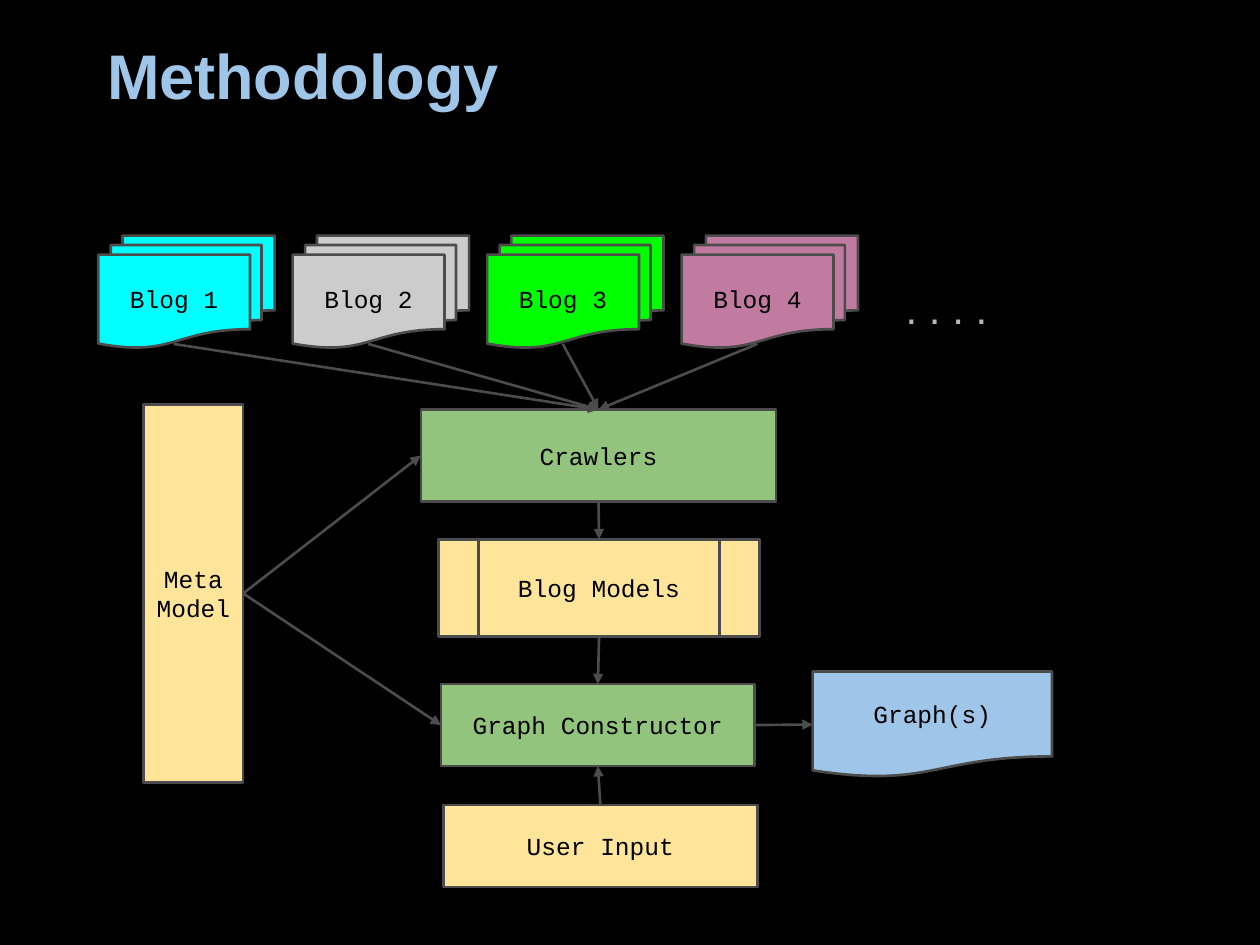
"""Build the Methodology slide: blogs are crawled, modelled and turned into graphs."""
from dataclasses import dataclass

import pptx
import pptx.dml.color
import pptx.enum.shapes
import pptx.enum.text
import pptx.oxml.xmlchemy
import pptx.util

Inches = pptx.util.Inches
Shapes = pptx.enum.shapes.MSO_SHAPE
Align = pptx.enum.text.PP_ALIGN
Anchor = pptx.enum.text.MSO_ANCHOR
Point = tuple[float, float]


@dataclass(frozen=True)
class Theme:
    """Colours, fonts and type sizes of the slide."""
    background: str = "000000"
    ink: str = "000000"
    outline: str = "4C4C4C"
    dots: str = "B7B7B7"
    blue: str = "9FC5E8"
    green: str = "93C47D"
    yellow: str = "FFE599"
    blogs: tuple[str, ...] = ("00FFFF", "CCCCCC", "00FF00", "C27BA0")
    heading_font: str = "Arial"
    label_font: str = "Courier New"
    title_size: float = 36
    dots_size: float = 24
    label_size: float = 14
    line_width: float = 1.5


THEME = Theme()


@dataclass(frozen=True)
class Node:
    """A labelled flowchart shape, measured in inches."""
    label: str
    left: float
    top: float
    width: float
    height: float
    fill: str
    kind: Shapes = Shapes.RECTANGLE

    @property
    def middle(self) -> float:
        """Return the vertical centre."""
        return self.top + self.height / 2

    @property
    def center(self) -> float:
        """Return the horizontal centre."""
        return self.left + self.width / 2

    @property
    def head(self) -> Point:
        """Return the middle of the top edge."""
        return self.center, self.top

    @property
    def foot(self) -> Point:
        """Return the middle of the bottom edge."""
        return self.center, self.top + self.height

    @property
    def start(self) -> Point:
        """Return the middle of the left edge."""
        return self.left, self.middle

    @property
    def end(self) -> Point:
        """Return the middle of the right edge."""
        return self.left + self.width, self.middle


def rgb(value: str) -> pptx.dml.color.RGBColor:
    """Turn a hex string into a colour."""
    return pptx.dml.color.RGBColor.from_string(value)


def write(shape, text: str, font: str, size: float, color: str,
          align: Align, anchor: Anchor, bold: bool = False) -> None:
    """Write one paragraph per line of text into a shape."""
    frame = shape.text_frame
    frame.word_wrap = True
    frame.auto_size = pptx.enum.text.MSO_AUTO_SIZE.SHAPE_TO_FIT_TEXT
    frame.vertical_anchor = anchor
    frame.margin_left = frame.margin_right = Inches(0.1)
    frame.margin_top = frame.margin_bottom = Inches(0.1)
    for index, line in enumerate(text.split("\n")):
        paragraph = frame.add_paragraph() if index else frame.paragraphs[0]
        paragraph.alignment = align
        run = paragraph.add_run()
        run.text = line
        run.font.name = font
        run.font.size = pptx.util.Pt(size)
        run.font.bold = bold
        run.font.color.rgb = rgb(color)


def draw_title(slide, text: str) -> None:
    """Place the title with its first-line indent."""
    title = slide.shapes.title
    title.left, title.top = Inches(0.5), Inches(0.3)
    title.width, title.height = Inches(9), Inches(0.69)
    write(title, text, THEME.heading_font, THEME.title_size, THEME.blue,
          Align.LEFT, Anchor.BOTTOM, bold=True)
    properties = title.text_frame.paragraphs[0]._p.get_or_add_pPr()
    properties.set("marL", "0")
    properties.set("indent", str(int(Inches(0.25))))


def draw_node(slide, node: Node) -> None:
    """Draw one flowchart shape with its label."""
    box = map(Inches, (node.left, node.top, node.width, node.height))
    shape = slide.shapes.add_shape(node.kind, *box)
    shape.shadow.inherit = False
    shape.fill.solid()
    shape.fill.fore_color.rgb = rgb(node.fill)
    shape.line.color.rgb = rgb(THEME.outline)
    shape.line.width = pptx.util.Pt(THEME.line_width)
    write(shape, node.label, THEME.label_font, THEME.label_size, THEME.ink,
          Align.CENTER, Anchor.MIDDLE)


def draw_arrow(slide, origin: Point, target: Point) -> None:
    """Draw a straight arrow between two points."""
    connector = slide.shapes.add_connector(
        pptx.enum.shapes.MSO_CONNECTOR.STRAIGHT, *map(Inches, origin + target))
    connector.line.color.rgb = rgb(THEME.outline)
    connector.line.width = pptx.util.Pt(THEME.line_width)
    tail = pptx.oxml.xmlchemy.OxmlElement("a:tailEnd")
    tail.set("type", "triangle")
    connector.line._get_or_add_ln().append(tail)
    effects = pptx.oxml.xmlchemy.OxmlElement("a:effectLst")
    connector._element.spPr.append(effects)


def main() -> None:
    """Build and save the presentation."""
    presentation = pptx.Presentation()
    presentation.slide_width, presentation.slide_height = Inches(10), Inches(7.5)
    slide = presentation.slides.add_slide(presentation.slide_layouts[5])
    slide.background.fill.solid()
    slide.background.fill.fore_color.rgb = rgb(THEME.background)
    draw_title(slide, "Methodology")

    blogs = [Node(f"Blog {index + 1}", 0.78 + index * 4.63 / 3, 1.87, 1.4, 0.89,
                  fill, Shapes.FLOWCHART_MULTIDOCUMENT)
             for index, fill in enumerate(THEME.blogs)]
    crawlers = Node("Crawlers", 3.34, 3.25, 2.82, 0.73, THEME.green)
    meta = Node("Meta\nModel", 1.14, 3.21, 0.79, 3, THEME.yellow)
    models = Node("Blog Models", 3.48, 4.28, 2.55, 0.77, THEME.yellow,
                  Shapes.FLOWCHART_PREDEFINED_PROCESS)
    constructor = Node("Graph Constructor", 3.5, 5.43, 2.49, 0.65, THEME.green)
    user_input = Node("User Input", 3.52, 6.39, 2.49, 0.65, THEME.yellow)
    graphs = Node("Graph(s)", 6.45, 5.33, 1.9, 0.84, THEME.blue,
                  Shapes.FLOWCHART_DOCUMENT)
    for node in (*blogs, crawlers, meta, models, constructor, user_input, graphs):
        draw_node(slide, node)

    for blog in blogs:
        draw_arrow(slide, (blog.left + 0.6, 2.73), crawlers.head)
    for origin, target in (
        (meta.end, crawlers.start),
        (meta.end, constructor.start),
        (crawlers.foot, models.head),
        (models.foot, constructor.head),
        (user_input.head, constructor.foot),
        (constructor.end, graphs.start),
    ):
        draw_arrow(slide, origin, target)

    dots = slide.shapes.add_textbox(*map(Inches, (7.09, 2.14, 1.97, 0.39)))
    write(dots, ". . . .", THEME.heading_font, THEME.dots_size, THEME.dots,
          Align.LEFT, Anchor.TOP)
    presentation.save("out.pptx")


if __name__ == "__main__":
    main()
